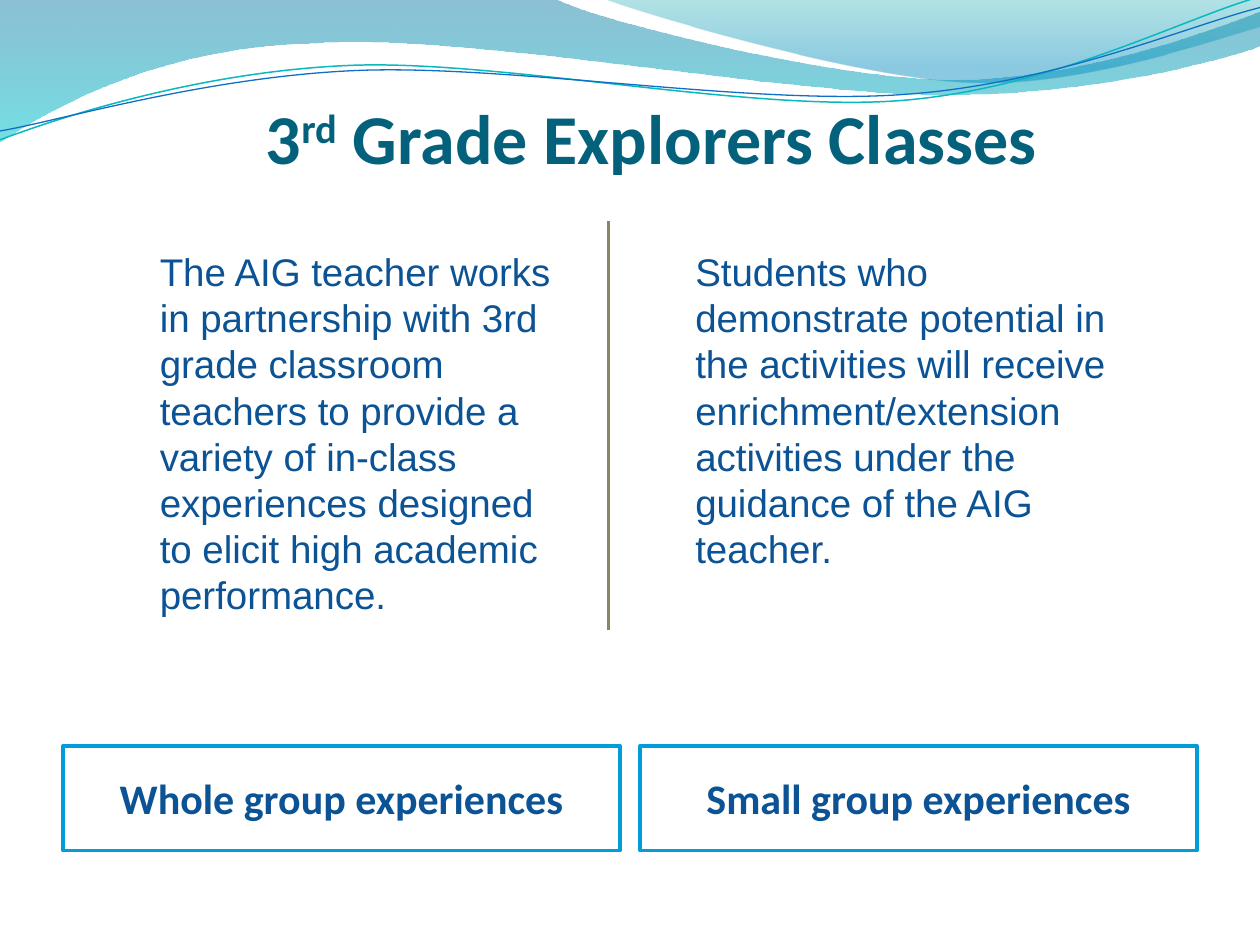
from pptx import Presentation
from pptx.dml.color import RGBColor
from pptx.enum.shapes import MSO_CONNECTOR, MSO_SHAPE
from pptx.enum.text import MSO_ANCHOR, PP_ALIGN
from pptx.oxml.ns import qn
from pptx.util import Inches, Pt
from lxml import etree

CENTER, LEFT = PP_ALIGN.CENTER, PP_ALIGN.LEFT
TOP, MIDDLE, BOTTOM = MSO_ANCHOR.TOP, MSO_ANCHOR.MIDDLE, MSO_ANCHOR.BOTTOM
RECT, STRAIGHT = MSO_SHAPE.RECTANGLE, MSO_CONNECTOR.STRAIGHT

TITLE = [("3", 0), ("rd", 30), (" Grade Explorers Classes", 0)]
COLUMNS = [
    (5.42, 3.5, 3.33, "Students who demonstrate potential in the activities will receive "
                      "enrichment/extension activities under the guidance of the AIG teacher."),
    (1.17, 3.33, 3.06, "The AIG teacher works in partnership with 3rd grade classroom teachers "
                       "to provide a variety of in-class experiences designed to elicit high "
                       "academic performance."),
]
LABELS = ["Whole group experiences", "Small group experiences"]
LABEL_W, LABEL_H, LABEL_TOP, MARGIN = 4.42, 0.83, 5.92, 0.5

TITLE_FONT = {"name": "Calibri", "size": Pt(40), "bold": True}
BODY_FONT = {"name": "Arial", "size": Pt(22)}
LABEL_FONT = {"name": "Calibri", "size": Pt(24), "bold": True}

BANDS = [
    ([(0, 0), (4.4, -0.01),
      (4.76, 0.17, 6.64, 0.63, 7.58, 0.63), (8.53, 0.63, 9.58, 0.26, 10, 0.09),
      (10.01, 0.36),
      (9.83, 0.44, 8.7, 0.76, 7.46, 0.75), (6.22, 0.75, 3.82, 0.28, 2.57, 0.34),
      (1.29, 0.36, 0.46, 0.83, -0.01, 1.13), (0, 0)],
     [(0, "0074A1", 45), (1, "00C6CF", 55)]),
    ([(4.79, -0.01),
      (5.09, 0.11, 6.82, 0.62, 7.69, 0.65), (8.56, 0.69, 9.61, 0.32, 10, 0.21),
      (10, 0), (4.79, -0.01)],
     [(0, "00A1A9", 30), (0.8, "008BBF", 45)]),
]
WAVES = [
    ([(0, 1.11), (0.48, 0.93, 1.58, 0.57, 2.77, 0.52),
      (3.95, 0.47, 5.93, 0.89, 7.13, 0.8), (8.33, 0.71, 9.38, 0.15, 9.98, -0.02)],
     "0AB8BF", 0.85),
    ([(0, 1.04), (0.47, 0.96, 1.64, 0.61, 2.83, 0.56),
      (4.03, 0.51, 5.97, 0.84, 7.17, 0.75), (8.36, 0.67, 9.41, 0.21, 10, 0.06)],
     "0F6FC6", 0.75),
]


def rgb(value):
    return RGBColor.from_string(value)


def set_line(line, color, width):
    line.color.rgb = rgb(color)
    line.width = Pt(width)


def add_outline(slide, path, close):
    ends = [(Inches(seg[-2]), Inches(seg[-1])) for seg in path]
    builder = slide.shapes.build_freeform(*ends[0])
    builder.add_line_segments(ends[1:], close=close)
    sp = builder.convert_to_shape()
    sp.shadow.inherit = False
    nodes = list(sp.element.spPr.iter(qn("a:lnTo")))
    for node, seg in zip(nodes, path[1:]):
        if len(seg) == 6:
            curve = etree.Element(qn("a:cubicBezTo"))
            for x, y in zip(seg[::2], seg[1::2]):
                pt = etree.SubElement(curve, qn("a:pt"))
                pt.set("x", str(Inches(x) - sp.left))
                pt.set("y", str(Inches(y) - sp.top))
            node.getparent().replace(node, curve)
    return sp


def add_band(slide, path, stops):
    sp = add_outline(slide, path, True)
    sp.line.fill.background()
    sp.fill.gradient()
    sp.fill.gradient_angle = 270
    for stop, (position, color, _) in zip(sp.fill.gradient_stops, stops):
        stop.position = position
        stop.color.rgb = rgb(color)
    colors = sp.element.spPr.findall(".//" + qn("a:gs") + "/" + qn("a:srgbClr"))
    for node, (_, _, opacity) in zip(colors, stops):
        etree.SubElement(node, qn("a:alpha")).set("val", str(opacity * 1000))


def write(sp, runs, font, color, align, anchor, spacing=None):
    tf = sp.text_frame
    tf.word_wrap = True
    tf.vertical_anchor = anchor
    p = tf.paragraphs[0]
    p.alignment = align
    p.line_spacing = spacing
    for text, baseline in runs:
        r = p.add_run()
        r.text = text
        for key, value in font.items():
            setattr(r.font, key, value)
        r.font.color.rgb = rgb(color)
        if baseline:
            r._r.get_or_add_rPr().set("baseline", str(baseline * 1000))
    return tf


def main():
    prs = Presentation()
    prs.slide_width, prs.slide_height = Inches(10), Inches(7.5)
    s = prs.slides.add_slide(prs.slide_layouts[6])

    for path, stops in BANDS:
        add_band(s, path, stops)
    for path, color, width in WAVES:
        wave = add_outline(s, path, False)
        wave.fill.background()
        set_line(wave.line, color, width)

    title = s.shapes.add_textbox(Inches(1.17), Inches(0.42), Inches(8), Inches(1))
    tf = write(title, TITLE, TITLE_FONT, "04617B", CENTER, BOTTOM)
    tf.margin_left = tf.margin_right = tf.margin_bottom = 0

    for left, width, height, text in COLUMNS:
        body = s.shapes.add_textbox(Inches(left), Inches(1.92), Inches(width), Inches(height))
        write(body, [(text, 0)], BODY_FONT, "0B5394", LEFT, TOP, Pt(26.4))

    step = 10 - 2 * MARGIN - LABEL_W
    for i, text in enumerate(LABELS):
        label = s.shapes.add_shape(RECT, Inches(MARGIN + i * step), Inches(LABEL_TOP),
                                   Inches(LABEL_W), Inches(LABEL_H))
        label.shadow.inherit = False
        label.fill.solid()
        label.fill.fore_color.rgb = rgb("FFFFFF")
        set_line(label.line, "009DD9", 2)
        write(label, [(text, 0)], LABEL_FONT, "0B5394", CENTER, MIDDLE)

    divider = s.shapes.add_connector(STRAIGHT, Inches(4.83), Inches(1.75), Inches(4.83), Inches(5))
    set_line(divider.line, "898761", 2)
    etree.SubElement(divider.element.spPr, qn("a:effectLst"))

    prs.save("out.pptx")


if __name__ == "__main__":
    main()
